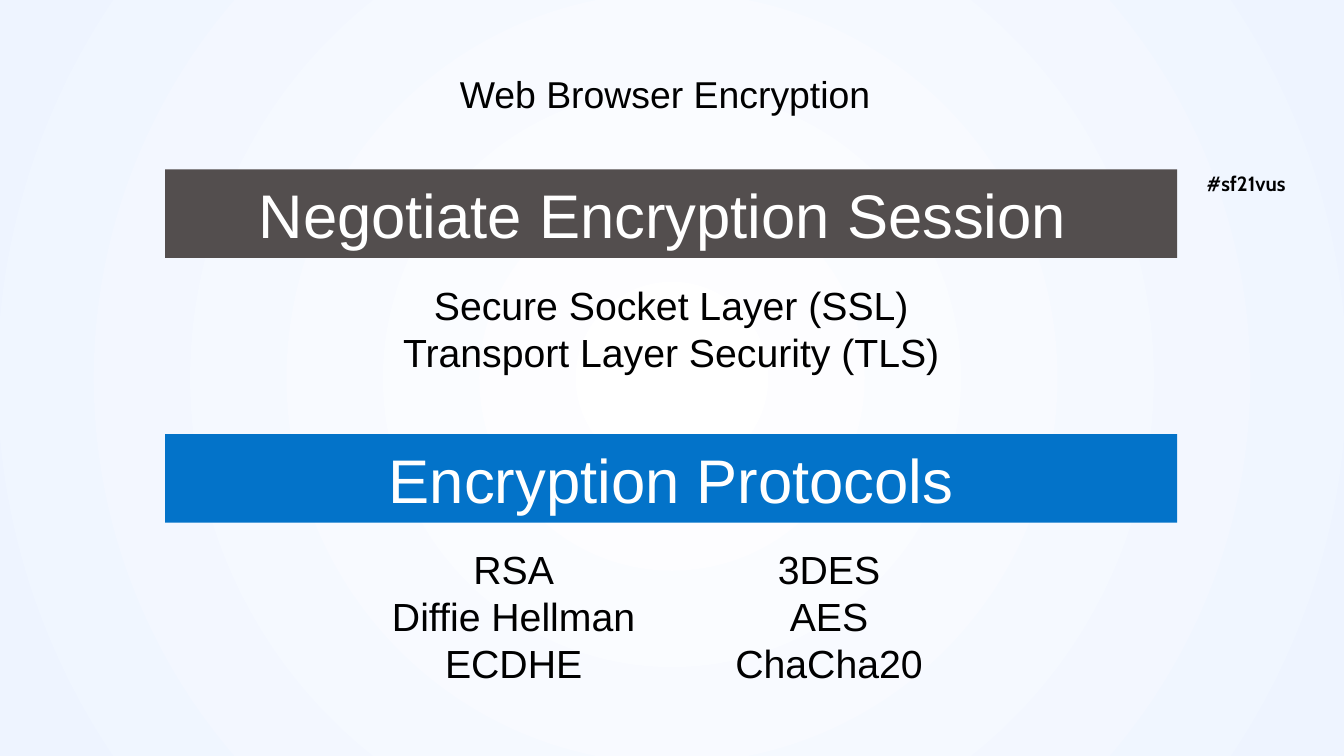
import pptx
import pptx.dml.color
import pptx.enum.shapes
import pptx.enum.text
import pptx.oxml
import pptx.oxml.ns
import pptx.util

Inches = pptx.util.Inches
Align = pptx.enum.text.PP_ALIGN
Anchor = pptx.enum.text.MSO_ANCHOR
BLACK = pptx.dml.color.RGBColor(0x00, 0x00, 0x00)
WHITE = pptx.dml.color.RGBColor(0xFF, 0xFF, 0xFF)
PALE_BLUE = pptx.dml.color.RGBColor(0xEE, 0xF4, 0xFF)
DARK_GREY = pptx.dml.color.RGBColor(0x53, 0x4E, 0x4E)
BLUE = pptx.dml.color.RGBColor(0x03, 0x73, 0xC9)

BAR_HEIGHT = 0.66
LIST_INSET = 1.32
LIST_OFFSET = 0.78


def set_background(slide):
    """Radial gradient, white in the middle."""
    fill = slide.background.fill
    fill.gradient()
    for stop, color in zip(fill.gradient_stops, (WHITE, PALE_BLUE)):
        stop.color.rgb = color
    properties = slide.background._cSld.bg.bgPr
    gradient = properties.find(pptx.oxml.ns.qn("a:gradFill"))
    linear = gradient.find(pptx.oxml.ns.qn("a:lin"))
    circle = pptx.oxml.parse_xml(
        f'<a:path {pptx.oxml.ns.nsdecls("a")} path="circle">'
        '<a:fillToRect l="50000" t="50000" r="50000" b="50000"/></a:path>')
    gradient.replace(linear, circle)


def write_lines(shape, lines, size, color=BLACK, font="Arial", bold=False,
                align=Align.CENTER, anchor=Anchor.TOP):
    frame = shape.text_frame
    frame.word_wrap = True
    frame.auto_size = pptx.enum.text.MSO_AUTO_SIZE.NONE
    frame.vertical_anchor = anchor
    for index, line in enumerate(lines):
        paragraph = frame.add_paragraph() if index else frame.paragraphs[0]
        paragraph.alignment = align
        paragraph.line_spacing = 1.0
        paragraph.space_before = pptx.util.Pt(0)
        run = paragraph.add_run()
        run.text = line
        run.font.name = font
        run.font.size = pptx.util.Pt(size)
        run.font.bold = bold
        run.font.color.rgb = color


def add_title(slide, left, top, width, height):
    title = slide.shapes.title
    title.left, title.top = Inches(left), Inches(top)
    title.width, title.height = Inches(width), Inches(height)
    write_lines(title, ["Web Browser Encryption"], 20)
    title.text_frame.margin_left = 0


def add_hashtag(slide, left, top, width, height):
    box = slide.shapes.add_textbox(
        Inches(left), Inches(top), Inches(width), Inches(height))
    write_lines(box, ["#sf21vus"], 11, font="Cabin", bold=True,
                align=Align.LEFT)
    box.text_frame.margin_top = box.text_frame.margin_bottom = Inches(0.1)


def add_section(slide, left, top, width, height, heading, color, lines, columns=1):
    """A coloured heading bar with a centred list below it."""
    # Heading bar
    bar = slide.shapes.add_shape(
        pptx.enum.shapes.MSO_SHAPE.RECTANGLE,
        Inches(left), Inches(top), Inches(width), Inches(BAR_HEIGHT))
    bar.shadow.inherit = False
    bar.fill.solid()
    bar.fill.fore_color.rgb = color
    bar.line.fill.background()
    write_lines(bar, [heading], 33, WHITE, anchor=Anchor.MIDDLE)

    # List
    box = slide.shapes.add_textbox(
        Inches(left + LIST_INSET), Inches(top + LIST_OFFSET),
        Inches(width - 2 * LIST_INSET), Inches(height - LIST_OFFSET))
    write_lines(box, lines, 21)
    if columns > 1:
        box.text_frame._txBody.bodyPr.set("numCol", str(columns))


def main():
    presentation = pptx.Presentation()
    presentation.slide_width = Inches(10)
    presentation.slide_height = presentation.slide_width * 9 // 16
    slide = presentation.slides.add_slide(presentation.slide_layouts[5])

    set_background(slide)
    add_hashtag(slide, 8.88, 1.17, 1.12, 0.39)
    add_title(slide, 0.58, 0.48, 8.84, 0.36)
    add_section(slide, 1.23, 1.26, 7.53, 1.59,
                "Negotiate Encryption Session ", DARK_GREY,
                ["Secure Socket Layer (SSL)", "Transport Layer Security (TLS)"])
    add_section(slide, 1.23, 3.23, 7.53, 1.94, "Encryption Protocols", BLUE,
                ["RSA", "Diffie Hellman", "ECDHE", "3DES", "AES", "ChaCha20"],
                columns=2)
    presentation.save("out.pptx")


if __name__ == "__main__":
    main()
